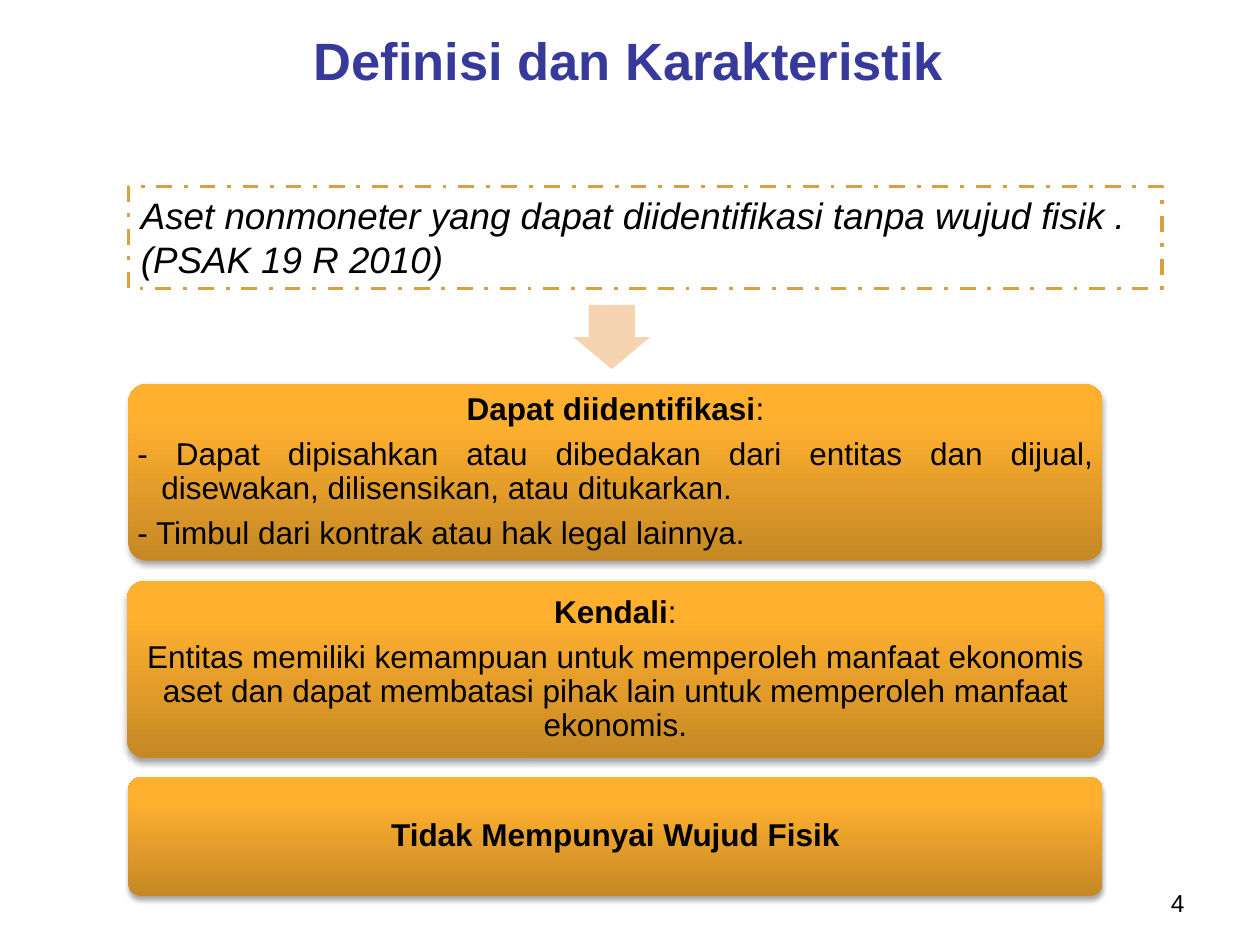
from lxml.etree import fromstring
from pptx import Presentation
from pptx.dml.color import RGBColor
from pptx.enum.dml import MSO_LINE
from pptx.enum.shapes import MSO_SHAPE
from pptx.enum.text import MSO_ANCHOR, PP_ALIGN
from pptx.oxml.ns import nsdecls
from pptx.util import Inches, Pt

TITLE = "Definisi dan Karakteristik"
DEFINITION = ["Aset nonmoneter yang dapat diidentifikasi tanpa wujud fisik .",
              "(PSAK 19 R 2010)"]
PAGE = "4"
# box (left, top, width, height), bold heading, text after heading,
# body paragraphs as (text, alignment, hanging indent)
CARDS = [
    ((1.02, 3.05, 7.73, 1.4), "Dapat diidentifikasi", ":", [
        ("- Dapat dipisahkan atau dibedakan dari entitas dan dijual, "
         "disewakan, dilisensikan, atau ditukarkan.", PP_ALIGN.JUSTIFY, 0.19),
        ("- Timbul dari kontrak atau hak legal lainnya.", PP_ALIGN.LEFT, 0.19)]),
    ((1.01, 4.61, 7.75, 1.41), "Kendali", ":", [
        ("Entitas memiliki kemampuan untuk memperoleh manfaat ekonomis aset "
         "dan dapat membatasi pihak lain untuk memperoleh manfaat ekonomis.",
         PP_ALIGN.CENTER, 0)]),
    ((1.02, 6.17, 7.73, 0.94), "Tidak Mempunyai Wujud Fisik", "", []),
]
GRADIENT = [(0, "C58824"), (80, "FFB02F"), (100, "FFB131")]


def rgb(value):
    return RGBColor.from_string(value)


def style(p, size, color="000000", align=PP_ALIGN.LEFT, bold=False, italic=False):
    p.alignment = align
    f = p.font
    f.name, f.size, f.bold, f.italic = "Arial", Pt(size), bold, italic
    f.color.rgb = rgb(color)


def add_text(box, text, size, anchor=MSO_ANCHOR.TOP, **look):
    tf = slide.shapes.add_textbox(*map(Inches, box)).text_frame
    tf.word_wrap = True
    tf.vertical_anchor = anchor
    tf.paragraphs[0].text = text
    style(tf.paragraphs[0], size, **look)


def add_shape(kind, box):
    s = slide.shapes.add_shape(kind, *map(Inches, box))
    s.shadow.inherit = False
    s.line.fill.background()
    return s


def add_gradient_and_shadow(s):
    """Fill from bottom to top and cast a soft shadow downwards."""
    stops = "".join(f'<a:gs pos="{pos * 1000}"><a:srgbClr val="{color}"/></a:gs>'
                    for pos, color in GRADIENT)
    grad = fromstring(f'<a:gradFill {nsdecls("a")} rotWithShape="1"><a:gsLst>{stops}'
                      '</a:gsLst><a:lin ang="16200000" scaled="0"/></a:gradFill>')
    shadow = fromstring(
        f'<a:outerShdw {nsdecls("a")} blurRad="{Pt(3.1)}" dist="{Pt(1.8)}" '
        'dir="5400000" rotWithShape="0"><a:srgbClr val="000000">'
        '<a:alpha val="35000"/></a:srgbClr></a:outerShdw>')
    props = s._element.spPr
    props.find("{*}prstGeom").addnext(grad)
    props.find("{*}effectLst").append(shadow)


def add_card(box, heading, suffix, body):
    s = add_shape(MSO_SHAPE.ROUNDED_RECTANGLE, box)
    s.adjustments[0] = 0.1
    add_gradient_and_shadow(s)
    tf = s.text_frame
    tf.word_wrap = True
    tf.vertical_anchor = MSO_ANCHOR.MIDDLE
    tf.margin_left = tf.margin_right = tf.margin_top = tf.margin_bottom = Inches(0.03)
    p = tf.paragraphs[0]
    style(p, 18, align=PP_ALIGN.CENTER)
    r = p.add_run()
    r.text, r.font.bold = heading, True
    if suffix:
        p.add_run().text = suffix
    for text, align, indent in body:
        p = tf.add_paragraph()
        p.text = text
        style(p, 18, align=align)
        if indent:
            pPr = p._p.get_or_add_pPr()
            pPr.set("marL", str(Inches(indent)))
            pPr.set("indent", str(-Inches(indent)))
    for p in tf.paragraphs:
        p.line_spacing, p.space_after = 0.9, Pt(6.3)


prs = Presentation()
prs.slide_width, prs.slide_height = Inches(10), Inches(7.5)
slide = prs.slides.add_slide(prs.slide_layouts[6])

add_text((0.49, 0.16, 9, 0.62), TITLE, 30, MSO_ANCHOR.MIDDLE,
         color="37399B", align=PP_ALIGN.CENTER, bold=True)
add_text((7.17, 7, 2.33, 0.35), PAGE, 14, align=PP_ALIGN.RIGHT)

arrow = add_shape(MSO_SHAPE.DOWN_ARROW, (4.55, 2.42, 0.61, 0.51))
arrow.adjustments[0], arrow.adjustments[1] = 0.6, 0.5
arrow.fill.solid()
arrow.fill.fore_color.rgb = rgb("F6D4B1")

definition = add_shape(MSO_SHAPE.RECTANGLE, (1.02, 1.48, 8.2, 0.81))
definition.fill.background()
definition.line.color.rgb = rgb("D99F41")
definition.line.width = Pt(2.25)
definition.line.dash_style = MSO_LINE.DASH_DOT
tf = definition.text_frame
tf.word_wrap = True
tf.vertical_anchor = MSO_ANCHOR.TOP
tf.text = "\n".join(DEFINITION)
for p in tf.paragraphs:
    style(p, 21, italic=True)

for card in CARDS:
    add_card(*card)

prs.save("out.pptx")
